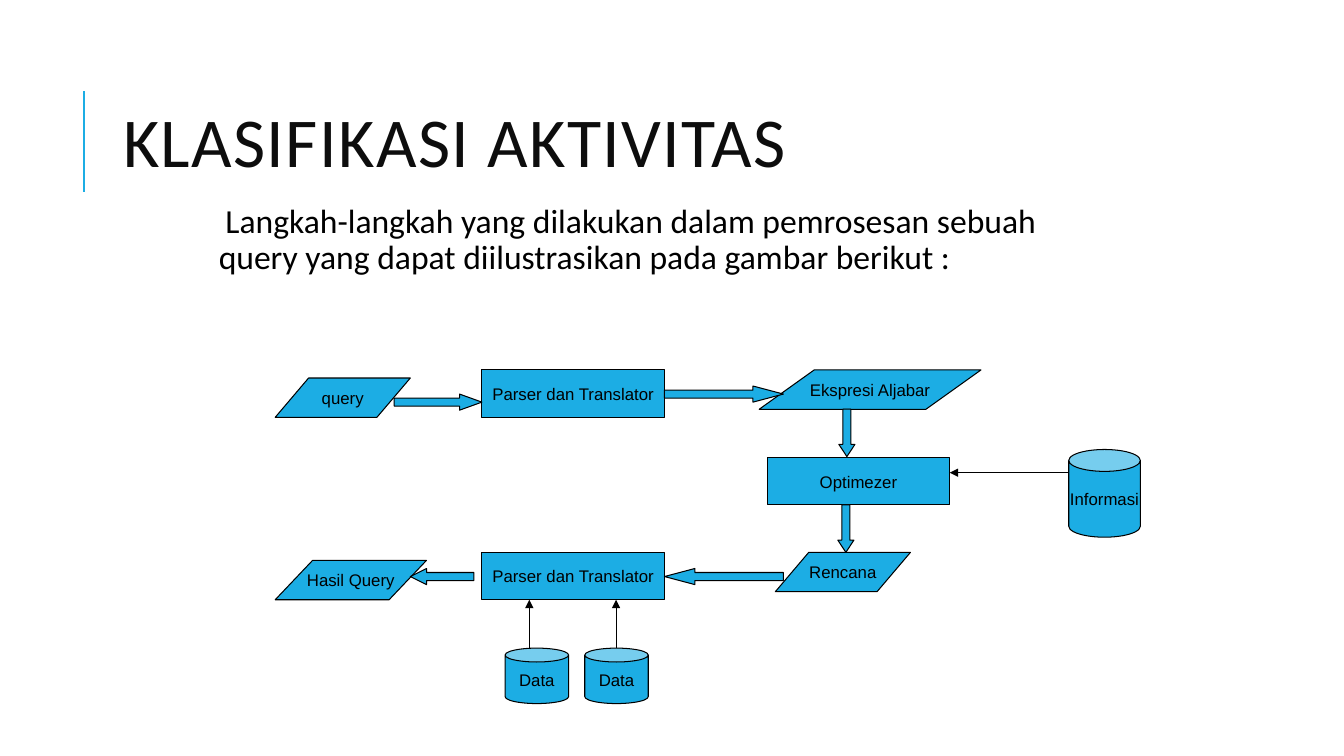
from lxml.etree import SubElement
from pptx import Presentation
from pptx.dml.color import RGBColor
from pptx.enum.shapes import MSO_CONNECTOR, MSO_SHAPE
from pptx.enum.text import MSO_ANCHOR, PP_ALIGN
from pptx.oxml.ns import qn
from pptx.util import Inches, Pt

COLORS = {"accent": "1CADE4", "black": "000000", "title": "0D0D0D"}

NODE_HEIGHT = 0.39
PROCESS_SIZE = (1.81, 0.47)
DATA_SIZE = (0.63, 0.55)
ARROW_WIDTH = 0.16

DATA_NODES = [
    ("query", 2.73, 3.75, 1.34, 0.849),
    ("Ekspresi Aljabar", 7.53, 3.67, 2.2, 1.399),
    ("Rencana", 7.69, 5.48, 1.34, 0.849),
    ("Hasil Query", 2.73, 5.56, 1.5, 0.949),
]
PROCESSES = [
    ("Parser dan Translator", 4.78, 3.67),
    ("Optimezer", 7.61, 4.54),
    ("Parser dan Translator", 4.78, 5.48),
]
STORES = [
    ("Data", (5.01, 6.43, *DATA_SIZE), 0.25),
    ("Data", (5.8, 6.43, *DATA_SIZE), 0.25),
    ("Informasi", (10.6, 4.46, 0.71, 0.87), 0.306),
]
BLOCK_ARROWS = [
    (MSO_SHAPE.RIGHT_ARROW, 3.91, 3.91, 0.87, 1.386),
    (MSO_SHAPE.RIGHT_ARROW, 6.59, 3.83, 1.18, 1.889),
    (MSO_SHAPE.DOWN_ARROW, 8.32, 4.06, 0.47, 0.758),
    (MSO_SHAPE.DOWN_ARROW, 8.31, 5.01, 0.47, 0.758),
    (MSO_SHAPE.LEFT_ARROW, 6.59, 5.64, 1.18, 1.889),
    (MSO_SHAPE.LEFT_ARROW, 4.07, 5.64, 0.63, 1.008),
]
THIN_ARROWS = [
    (5.25, 6.43, 5.25, 5.95),
    (6.11, 6.43, 6.11, 5.95),
    (10.6, 4.69, 9.42, 4.69),
]


def color(name):
    return RGBColor.from_string(COLORS[name])


def add_span(para, text, size, font, color_name):
    span = para.add_run()
    span.text = text
    span.font.size = Pt(size)
    span.font.name = font
    span.font.color.rgb = color(color_name)
    return span


def add_block(page, kind, bounds, adjustments=()):
    box = page.shapes.add_shape(kind, *map(Inches, bounds))
    box.shadow.inherit = False
    box.fill.solid()
    box.fill.fore_color.rgb = color("accent")
    box.line.color.rgb = color("black")
    box.line.width = Pt(0.75)
    for index, value in enumerate(adjustments):
        box.adjustments[index] = value
    return box


def add_node(page, kind, label, bounds, adjustments=()):
    frame = add_block(page, kind, bounds, adjustments).text_frame
    frame.word_wrap = False
    frame.vertical_anchor = MSO_ANCHOR.MIDDLE
    para = frame.paragraphs[0]
    para.alignment = PP_ALIGN.CENTER
    add_span(para, label, 12, "Arial", "black")


def add_block_arrow(page, kind, left, top, length, head):
    size = (length, ARROW_WIDTH)
    if kind == MSO_SHAPE.DOWN_ARROW:
        size = (ARROW_WIDTH, length)
    add_block(page, kind, (left, top, *size), (0.5, head))


def add_line(page, points, color_name, width, arrow=False):
    line = page.shapes.add_connector(MSO_CONNECTOR.STRAIGHT, *map(Inches, points))
    line.line.color.rgb = color(color_name)
    line.line.width = Pt(width)
    if arrow:
        SubElement(line.line._get_or_add_ln(), qn("a:tailEnd"), type="triangle")
    SubElement(line._element.spPr, qn("a:effectLst"))


def set_title(page, text):
    title = page.shapes.title
    title.left, title.top, title.width, title.height = map(
        Inches, (1.12, 0.64, 10.63, 1.64))
    frame = title.text_frame
    frame.word_wrap = True
    frame.vertical_anchor = MSO_ANCHOR.MIDDLE
    para = frame.paragraphs[0]
    para.alignment = PP_ALIGN.LEFT
    para.line_spacing = 0.8
    span = add_span(para, text, 50, "Calibri", "title")
    span.font._element.set("spc", "100")


def add_intro(page, text):
    box = page.shapes.add_textbox(*map(Inches, (2.02, 1.98, 9, 4.53)))
    frame = box.text_frame
    frame.word_wrap = True
    frame.margin_left = frame.margin_right = Inches(0.05)
    frame.margin_top = frame.margin_bottom = Inches(0.05)
    para = frame.paragraphs[0]
    para.line_spacing = 0.9
    para.space_before = Pt(12)
    para.space_after = Pt(2)
    properties = para._p.get_or_add_pPr()
    properties.set("marL", str(Inches(0.1)))
    properties.set("indent", str(Inches(-0.1)))
    SubElement(properties, qn("a:buChar"), char=" ")
    add_span(para, text, 24, "Calibri", "black")


def main():
    deck = Presentation()
    deck.slide_width = Inches(13.33)
    deck.slide_height = Inches(7.5)
    page = deck.slides.add_slide(deck.slide_layouts.get_by_name("Title Only"))

    add_line(page, (0.83, 1.9, 0.83, 0.9), "accent", 1.5)
    set_title(page, "KLASIFIKASI AKTIVITAS")
    add_intro(page, "Langkah-langkah yang dilakukan dalam pemrosesan sebuah "
                    "query yang dapat diilustrasikan pada gambar berikut :")

    for label, left, top, width, slant in DATA_NODES:
        add_node(page, MSO_SHAPE.PARALLELOGRAM, label,
                 (left, top, width, NODE_HEIGHT), (slant,))
    for label, left, top in PROCESSES:
        add_node(page, MSO_SHAPE.RECTANGLE, label, (left, top, *PROCESS_SIZE))
    for label, bounds, lid in STORES:
        add_node(page, MSO_SHAPE.CAN, label, bounds, (lid,))
    for arrow in BLOCK_ARROWS:
        add_block_arrow(page, *arrow)
    for points in THIN_ARROWS:
        add_line(page, points, "black", 0.75, arrow=True)

    deck.save("out.pptx")


if __name__ == "__main__":
    main()
